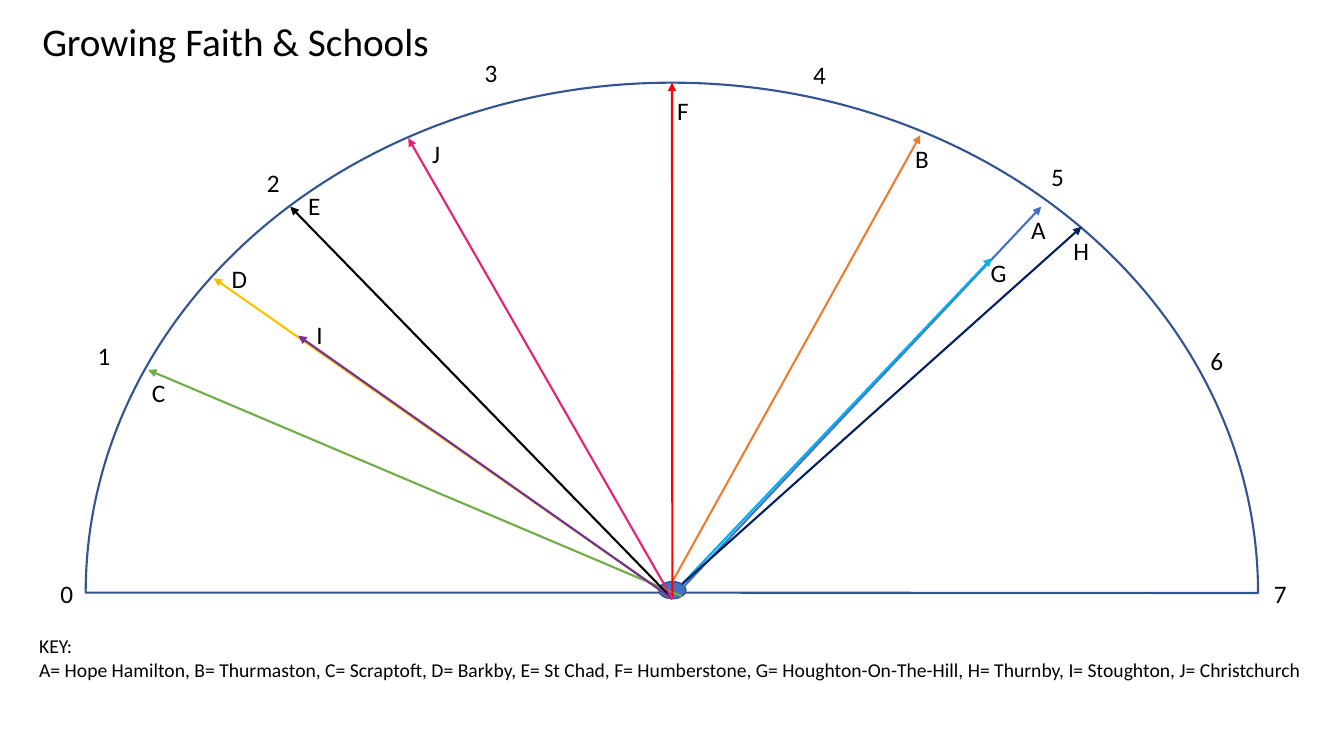
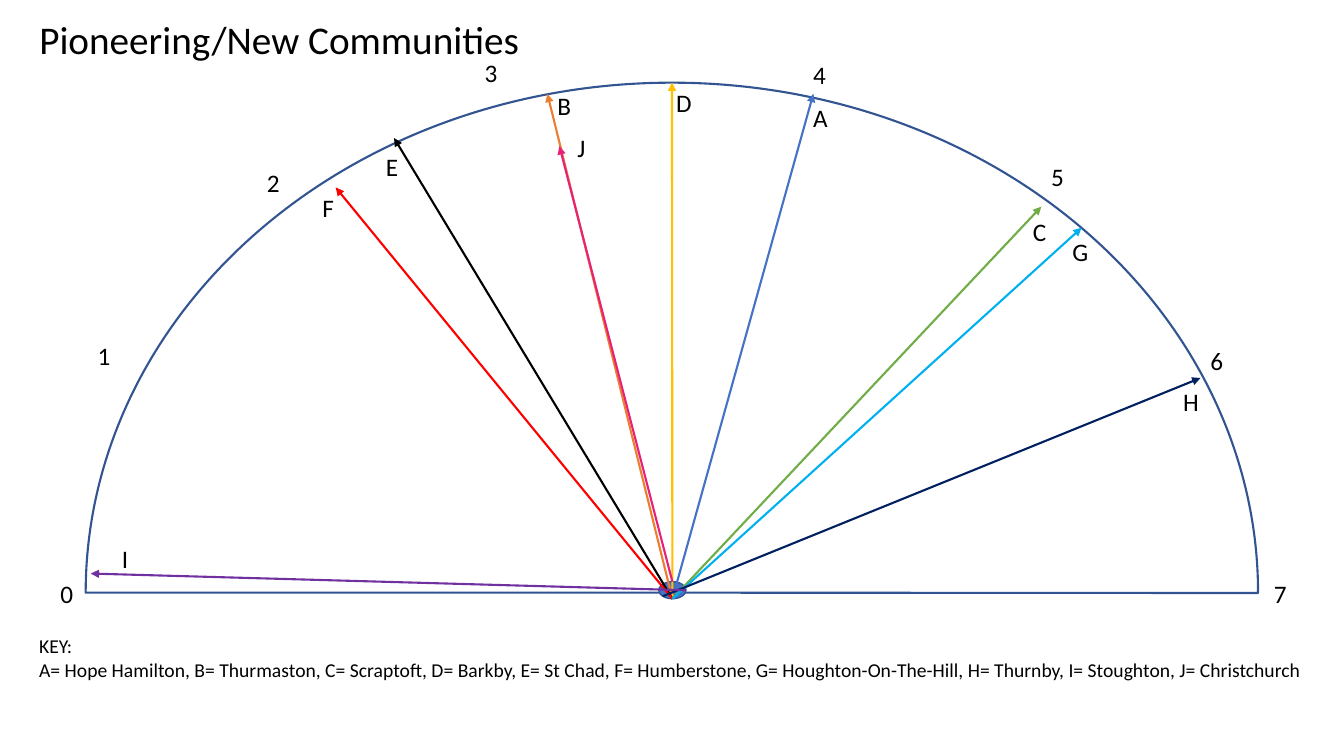
from dataclasses import dataclass
from enum import Enum
from math import cos, radians, sin
from typing import NamedTuple

from lxml.etree import SubElement
from pptx import Presentation
from pptx.dml.color import RGBColor
from pptx.enum.shapes import MSO_CONNECTOR, MSO_SHAPE
from pptx.enum.text import MSO_ANCHOR, MSO_AUTO_SIZE, PP_ALIGN
from pptx.oxml.ns import qn
from pptx.shapes.autoshape import Shape
from pptx.slide import Slide
from pptx.text.text import TextFrame
from pptx.util import Pt


@dataclass(frozen=True)
class Theme:
    font: str = "Calibri"
    text: str = "000000"
    outline: str = "325491"
    hub: str = "4472C4"
    title_size: float = 28
    label_size: float = 18
    key_size: float = 14
    line_width: float = 1.5
    hub_line_width: float = 1


class Point(NamedTuple):
    x: float
    y: float


class Box(NamedTuple):
    left: float
    top: float
    width: float
    height: float


class HubSide(Enum):
    """Where an arrow leaves the hub, in degrees clockwise from the right."""
    RIGHT = 0
    LOWER_RIGHT = 45
    BOTTOM = 90
    LOWER_LEFT = 135
    TOP = 270
    UPPER_RIGHT = 315


class Parish(NamedTuple):
    name: str
    color: str


class Rating(NamedTuple):
    letter: str
    tip: Point
    label: Point
    start: HubSide = HubSide.BOTTOM


class Dial(NamedTuple):
    title: str
    title_at: Point
    ratings: list[Rating]


THEME = Theme()
SLIDE_WIDTH, SLIDE_HEIGHT = 960, 540
DOME = Box(61.2, 59, 837.4, 728.6)
HUB = Box(470.6, 415.5, 19.4, 12.2)
KEY = Box(20.9, 449.3, 938.9, 41)
TITLE_WIDTH, TITLE_HEIGHT = 437, 41
LABEL_WIDTH, LABEL_HEIGHT = 28.8, 28.8

SCALE = [
    Point(36, 409.7), Point(62.6, 239.8), Point(183.6, 115.9), Point(339.1, 37.4),
    Point(573.8, 38.9), Point(743.8, 111.6), Point(857.5, 243.4), Point(902.9, 409.7),
]

PARISHES = {
    "A": Parish("Hope Hamilton", "4472C4"),
    "B": Parish("Thurmaston", "ED7D31"),
    "C": Parish("Scraptoft", "70AD47"),
    "D": Parish("Barkby", "FFC000"),
    "E": Parish("St Chad", "000000"),
    "F": Parish("Humberstone", "FF0000"),
    "G": Parish("Houghton-On-The-Hill", "00B0F0"),
    "H": Parish("Thurnby", "002060"),
    "I": Parish("Stoughton", "7030A0"),
    "J": Parish("Christchurch", "E72176"),
}

DIALS = [
    Dial("Growing Faith & Schools", Point(23, 8.6), [
        Rating("A", Point(743.8, 147.6), Point(729.4, 149.8)),
        Rating("B", Point(657.4, 96.5), Point(646.6, 98.6), HubSide.TOP),
        Rating("C", Point(105.8, 264.2), Point(101.5, 265.7), HubSide.LOWER_RIGHT),
        Rating("D", Point(152.6, 198.7), Point(158.4, 184.3)),
        Rating("E", Point(207.4, 147.6), Point(213.1, 132.5)),
        Rating("F", Point(480, 59), Point(476.6, 64.8)),
        Rating("G", Point(708.5, 184.3), Point(700.6, 180), HubSide.UPPER_RIGHT),
        Rating("H", Point(772.6, 162), Point(759.6, 164.9), HubSide.UPPER_RIGHT),
        Rating("I", Point(213.1, 239.8), Point(218.9, 224.6)),
        Rating("J", Point(291.6, 98.6), Point(301.7, 95)),
    ]),
    Dial("Pioneering/New Communities", Point(20.9, 7.2), [
        Rating("A", Point(581, 67), Point(573.8, 69.8)),
        Rating("B", Point(391, 67), Point(391, 61.2)),
        Rating("C", Point(743.8, 147.6), Point(730.8, 151.2)),
        Rating("D", Point(480, 59), Point(475.9, 59)),
        Rating("E", Point(281.5, 98.6), Point(268.6, 104.4)),
        Rating("F", Point(239.8, 133.9), Point(223.2, 133.9)),
        Rating("G", Point(772.6, 162.7), Point(758.9, 165.6)),
        Rating("H", Point(857.5, 270), Point(838.1, 272.2), HubSide.LOWER_LEFT),
        Rating("I", Point(64.8, 409.7), Point(79.9, 384.5), HubSide.RIGHT),
        Rating("J", Point(399.6, 104.4), Point(405.4, 90.7), HubSide.TOP),
    ]),
]


def rgb(color: str) -> RGBColor:
    return RGBColor.from_string(color)


def emu(box: Box) -> list[Pt]:
    return [Pt(length) for length in box]


def write(frame: TextFrame, lines: list[str], size: float) -> None:
    frame.word_wrap = True
    frame.auto_size = MSO_AUTO_SIZE.NONE
    frame.vertical_anchor = MSO_ANCHOR.TOP
    for index, line in enumerate(lines):
        paragraph = frame.add_paragraph() if index else frame.paragraphs[0]
        paragraph.alignment = PP_ALIGN.LEFT
        run = paragraph.add_run()
        run.text = line
        run.font.name = THEME.font
        run.font.size = Pt(size)
        run.font.color.rgb = rgb(THEME.text)


def add_title(slide: Slide, dial: Dial) -> None:
    title = slide.shapes.title
    title.left, title.top, title.width, title.height = emu(
        Box(*dial.title_at, TITLE_WIDTH, TITLE_HEIGHT))
    write(title.text_frame, [dial.title], THEME.title_size)


def add_label(slide: Slide, text: str, at: Point) -> None:
    label = slide.shapes.add_textbox(*emu(Box(*at, LABEL_WIDTH, LABEL_HEIGHT)))
    write(label.text_frame, [text], THEME.label_size)


def add_outlined(slide: Slide, preset: MSO_SHAPE, box: Box, width: float) -> Shape:
    shape = slide.shapes.add_shape(preset, *emu(box))
    shape.shadow.inherit = False
    shape.line.color.rgb = rgb(THEME.outline)
    shape.line.width = Pt(width)
    return shape


def add_scale(slide: Slide) -> None:
    dome = add_outlined(slide, MSO_SHAPE.PIE, DOME, THEME.line_width)
    dome.adjustments[0], dome.adjustments[1] = 0, 108.02
    dome.rotation = 180
    dome.fill.background()

    hub = add_outlined(slide, MSO_SHAPE.OVAL, HUB, THEME.hub_line_width)
    hub.fill.solid()
    hub.fill.fore_color.rgb = rgb(THEME.hub)

    for number, at in enumerate(SCALE):
        add_label(slide, str(number), at)


def hub_point(side: HubSide) -> Point:
    angle = radians(side.value)
    return Point(HUB.left + HUB.width / 2 * (1 + cos(angle)),
                 HUB.top + HUB.height / 2 * (1 + sin(angle)))


def add_rating(slide: Slide, rating: Rating) -> None:
    start = hub_point(rating.start)
    arrow = slide.shapes.add_connector(
        MSO_CONNECTOR.STRAIGHT, Pt(start.x), Pt(start.y),
        Pt(rating.tip.x), Pt(rating.tip.y))
    arrow.line.color.rgb = rgb(PARISHES[rating.letter].color)
    arrow.line.width = Pt(THEME.line_width)
    properties = arrow.element.spPr
    SubElement(properties.find(qn("a:ln")), qn("a:tailEnd"), type="triangle")
    SubElement(properties, qn("a:effectLst"))
    add_label(slide, rating.letter, rating.label)


def add_key(slide: Slide) -> None:
    entries = ", ".join(f"{letter}= {parish.name}" for letter, parish in PARISHES.items())
    key = slide.shapes.add_textbox(*emu(KEY))
    write(key.text_frame, ["KEY:", entries], THEME.key_size)


def main() -> None:
    deck = Presentation()
    deck.slide_width, deck.slide_height = Pt(SLIDE_WIDTH), Pt(SLIDE_HEIGHT)
    title_only = deck.slide_layouts[5]
    for dial in DIALS:
        slide = deck.slides.add_slide(title_only)
        add_title(slide, dial)
        add_scale(slide)
        for rating in dial.ratings:
            add_rating(slide, rating)
        add_key(slide)
    deck.save("out.pptx")


if __name__ == "__main__":
    main()
